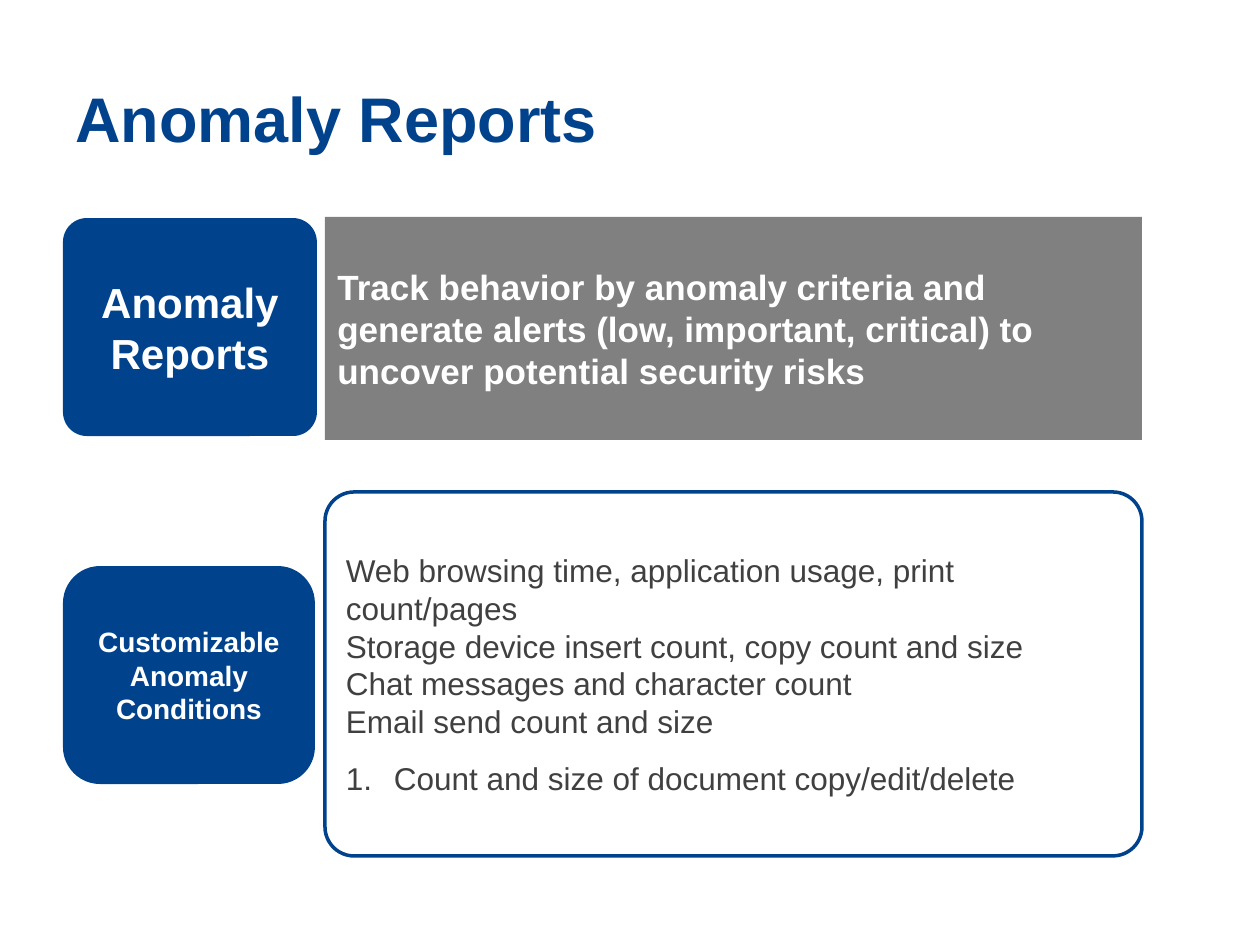
from lxml.etree import SubElement
from pptx import Presentation
from pptx.dml.color import RGBColor
from pptx.enum.shapes import MSO_SHAPE
from pptx.enum.text import MSO_ANCHOR, PP_ALIGN
from pptx.oxml.ns import qn
from pptx.util import Emu, Pt

NAVY = RGBColor(0x00, 0x42, 0x8C)
GRAY = RGBColor(0x80, 0x80, 0x80)
DARK = RGBColor(0x40, 0x40, 0x40)
WHITE = RGBColor(0xFF, 0xFF, 0xFF)

LABEL_LEFT = 63
DETAIL_LEFT = 325
DETAIL_WIDTH = 817
LABEL_HEIGHT = 218

CONDITIONS = [
    "Web browsing time, application usage, print count/pages",
    "Storage device insert count, copy count and size",
    "Chat messages and character count",
    "Email send count and size",
    "Count and size of document copy/edit/delete",
]


def px(value):
    return Emu(round(value * 914400 / 126))


def write_text(shape, lines, size, color, bold=True, alignment=PP_ALIGN.LEFT):
    frame = shape.text_frame
    frame.word_wrap = True
    frame.vertical_anchor = MSO_ANCHOR.MIDDLE
    frame.text = "\n".join(lines)
    for paragraph in frame.paragraphs:
        paragraph.alignment = alignment
        paragraph.font.name = "Arial"
        paragraph.font.size = Pt(size)
        paragraph.font.bold = bold
        paragraph.font.color.rgb = color


def add_title(slide, text):
    title = slide.shapes.add_textbox(px(LABEL_LEFT), px(38), px(1134), px(158))
    write_text(title, [text], 36, NAVY)


def add_box(slide, kind, left, top, width, height, fill=None, corner=None):
    box = slide.shapes.add_shape(kind, px(left), px(top), px(width), px(height))
    box.shadow.inherit = False
    if corner is not None:
        box.adjustments[0] = corner
    if fill is None:
        box.fill.background()
        box.line.color.rgb = NAVY
        box.line.width = Pt(2)
    else:
        box.fill.solid()
        box.fill.fore_color.rgb = fill
        box.line.fill.background()
    return box


def add_label(slide, text, top, width, size, corner):
    label = add_box(slide, MSO_SHAPE.ROUNDED_RECTANGLE, LABEL_LEFT, top, width,
                    LABEL_HEIGHT, NAVY, corner)
    write_text(label, [text], size, WHITE, alignment=PP_ALIGN.CENTER)


def add_summary(slide, text):
    summary = add_box(slide, MSO_SHAPE.RECTANGLE, DETAIL_LEFT, 217,
                      DETAIL_WIDTH, 223, GRAY)
    write_text(summary, [text], 20, WHITE)


def number_paragraph(paragraph, indent):
    properties = paragraph._p.get_or_add_pPr()
    properties.set("marL", str(indent))
    properties.set("indent", str(-indent))
    SubElement(properties, qn("a:buFont"), typeface="+mj-lt")
    SubElement(properties, qn("a:buAutoNum"), type="arabicPeriod")


def add_conditions(slide, lines):
    panel = add_box(slide, MSO_SHAPE.ROUNDED_RECTANGLE, DETAIL_LEFT, 492,
                    DETAIL_WIDTH, 364, corner=0.08)
    panel.text_frame.text = "\n".join(lines)
    write_text(panel, lines, 18, DARK, bold=False)
    numbered = panel.text_frame.paragraphs[-1]
    properties = numbered._p.get_or_add_pPr()
    default_font = properties.find(qn("a:defRPr"))
    number_paragraph(numbered, px(48))
    properties.append(default_font)
    numbered.line_spacing = 1.5


def main():
    presentation = Presentation()
    presentation.slide_width = px(1260)
    presentation.slide_height = px(945)
    slide = presentation.slides.add_slide(presentation.slide_layouts[6])
    add_title(slide, "Anomaly Reports")
    add_label(slide, "Anomaly Reports", 218, 254, 24, 0.11)
    add_summary(slide, "Track behavior by anomaly criteria and generate alerts "
                       "(low, important, critical) to uncover potential security risks")
    add_conditions(slide, CONDITIONS)
    add_label(slide, "Customizable Anomaly Conditions", 566, 252, 16, 0.17)
    presentation.save("out.pptx")


if __name__ == "__main__":
    main()
